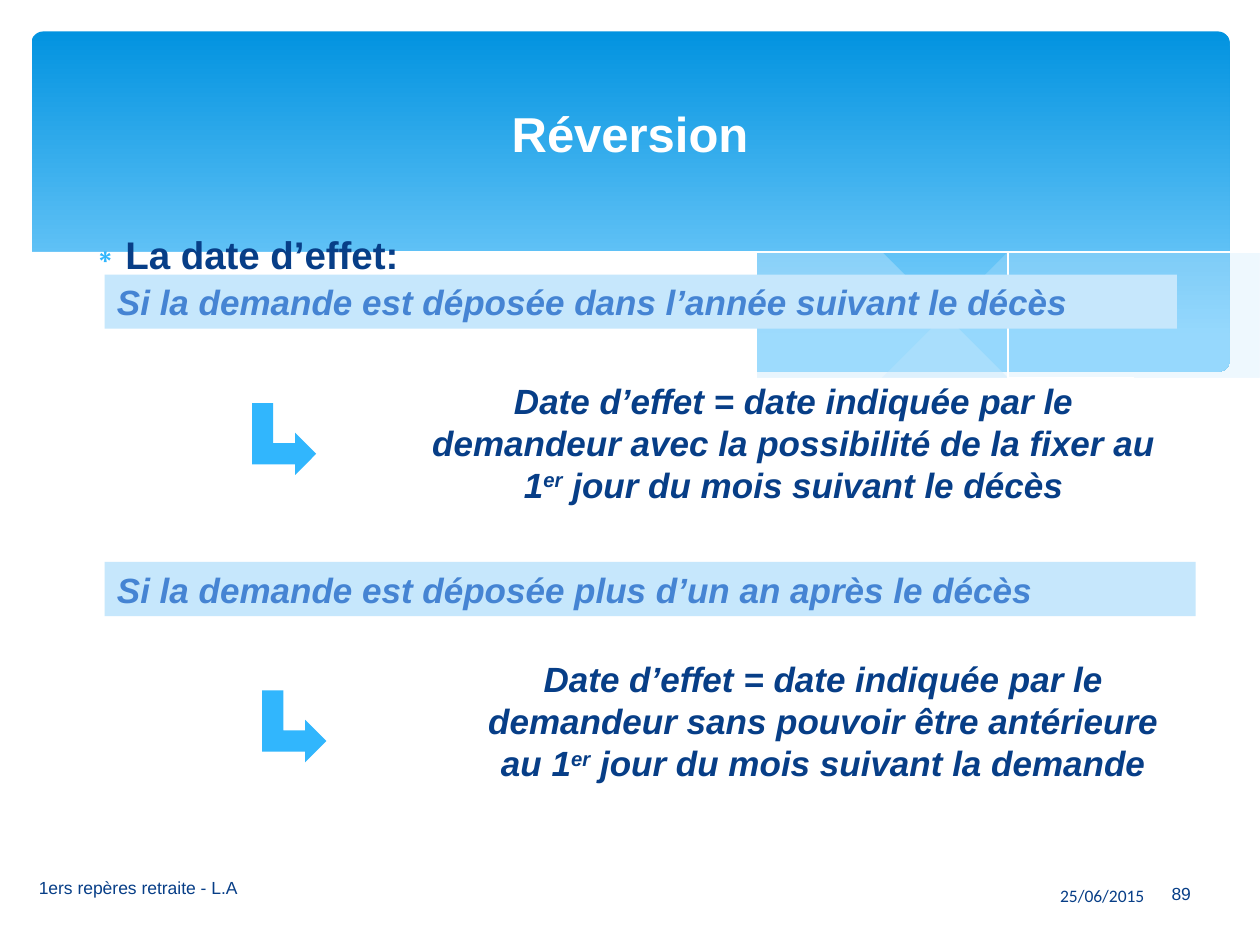
from lxml import etree
from pptx import Presentation
from pptx.dml.color import RGBColor
from pptx.enum.shapes import MSO_SHAPE
from pptx.enum.text import MSO_ANCHOR, PP_ALIGN
from pptx.oxml.ns import qn
from pptx.util import Inches, Pt

LEFT, CENTER, RIGHT = PP_ALIGN.LEFT, PP_ALIGN.CENTER, PP_ALIGN.RIGHT
TOP, MIDDLE = MSO_ANCHOR.TOP, MSO_ANCHOR.MIDDLE
ROUNDED, RECT, BENT_ARROW = (MSO_SHAPE.ROUNDED_RECTANGLE, MSO_SHAPE.RECTANGLE,
                             MSO_SHAPE.BENT_UP_ARROW)
WHITE, PALE, SKY, BLUE, NAVY = "FFFFFF", "C6E7FC", "31B6FD", "4584D3", "073E87"

TITLE = "Réversion"
HEADING = "La date d’effet:"
CASES = [
    {"condition": "Si la demande est déposée dans l’année suivant le décès",
     "band": (0.83, 2.18, 8.51, 0.43), "arrow": (1.97, 3.23, 0.57, 0.51),
     "rule": ["Date d’effet = date indiquée par le demandeur avec la possibilité "
              "de la fixer au 1", "er", " jour du mois suivant le décès"],
     "text": (3.27, 2.96, 6.06, 1.1)},
    {"condition": "Si la demande est déposée plus d’un an après le décès",
     "band": (0.83, 4.46, 8.66, 0.43), "arrow": (2.05, 5.51, 0.57, 0.51),
     "rule": ["Date d’effet = date indiquée par le demandeur sans pouvoir être "
              "antérieure au 1", "er", " jour du mois suivant la demande"],
     "text": (3.66, 5.17, 5.75, 1.1)},
]
FOOTERS = [
    ("1ers repères retraite - L.A", (0.21, 6.84, 4.14, 0.4), LEFT, "Arial"),
    ("25/06/2015", (5.65, 6.98, 3.53, 0.26), RIGHT, "Calibri"),
    ("89", (9.1, 6.9, 0.55, 0.39), CENTER, "Arial"),
]

RIGHT_WAVE = [
    [(9.76, 2), (9.35, 2.07), (8.91, 2.16), (8.32, 2.3), (7.53, 2.48), (6.61, 2.65)],
    [(6.61, 2.65), (7.05, 2.71), (7.57, 2.76), (8.14, 2.78), (8.63, 2.75),
     (9.05, 2.69), (9.42, 2.59), (9.76, 2.47)],
]
MIDDLE_WAVE = [
    [(8.93, 2.73), (8.37, 2.65), (7.75, 2.54), (7.06, 2.4), (6.29, 2.22), (5.69, 2.08),
     (5.14, 1.98), (4.65, 1.91), (4.2, 1.87), (3.61, 1.85), (3.28, 1.87), (2.86, 1.91)],
    [(2.86, 1.91), (3.42, 1.99), (4.04, 2.11), (4.91, 2.32), (5.66, 2.48), (6.34, 2.61),
     (6.95, 2.7), (7.48, 2.76), (8.07, 2.78), (8.48, 2.77), (8.93, 2.73)],
]
FALLING_LINE = [[(3.09, 1.95), (3.53, 1.89), (4.16, 1.87), (4.89, 1.9), (5.82, 2),
                 (6.65, 2.13), (7.6, 2.33), (8.31, 2.51), (9.07, 2.72)]]
RISING_LINE = [[(6.13, 2.57), (6.95, 2.35), (7.76, 2.16), (8.36, 2.04), (8.95, 1.94),
                (9.38, 1.88), (9.75, 1.85)]]
WHITE_WAVE = [
    [(9.77, 2.46), (9.4, 2.59), (8.99, 2.69), (8.5, 2.75), (8.09, 2.77), (7.61, 2.75),
     (7.08, 2.7), (6.48, 2.62), (5.79, 2.5), (5.03, 2.33), (4.47, 2.2), (3.91, 2.07),
     (3.4, 1.97), (2.92, 1.9), (2.5, 1.86), (1.93, 1.84), (1.46, 1.85), (1.06, 1.89),
     (0.76, 1.95), (0.46, 2.03), (0.23, 2.13)],
    [(0.23, 3.29), (9.77, 3.29)],
]
WAVES = [(RIGHT_WAVE, PALE, 29), (MIDDLE_WAVE, PALE, 40), (FALLING_LINE, None, 100),
         (RISING_LINE, None, 100), (WHITE_WAVE, WHITE, 100)]
STEPS = 4


def rgb(value):
    return RGBColor.from_string(value)


def smooth(points):
    padded = [points[0], *points, points[-1]]
    curve = [points[0]]
    for a, b, c, d in zip(padded, padded[1:], padded[2:], padded[3:]):
        for step in range(1, STEPS + 1):
            t = step / STEPS
            curve.append(tuple(
                (2 * q + (r - p) * t + (2 * p - 5 * q + 4 * r - s) * t ** 2
                 + (3 * q - p - 3 * r + s) * t ** 3) / 2
                for p, q, r, s in zip(a, b, c, d)))
    return curve


def add_wave(shapes, sections, color, opacity):
    points = [point for section in sections for point in smooth(section)]
    builder = shapes.build_freeform(*points[0], scale=Inches(1))
    builder.add_line_segments(points[1:], close=color is not None)
    sp = builder.convert_to_shape()
    sp.shadow.inherit = False
    if color is None:
        sp.fill.background()
        sp.line.color.rgb = rgb(WHITE)
        sp.line.width = Pt(0)
        return
    paint(sp, color)
    if opacity < 100:
        srgb = sp.element.spPr.find(qn("a:solidFill")).find(qn("a:srgbClr"))
        etree.SubElement(srgb, qn("a:alpha")).set("val", str(opacity * 1000))


def paint(sp, color):
    sp.shadow.inherit = False
    sp.fill.solid()
    sp.fill.fore_color.rgb = rgb(color)
    sp.line.fill.background()


def place(sp, box):
    sp.left, sp.top, sp.width, sp.height = map(Inches, box)


def write(sp, runs, size, color, align=LEFT, anchor=TOP, font="Arial",
          bold=False, italic=False):
    tf = sp.text_frame
    tf.word_wrap = True
    tf.vertical_anchor = anchor
    p = tf.paragraphs[0]
    p.alignment = align
    for index, text in enumerate(runs):
        r = p.add_run()
        r.text = text
        r.font.name, r.font.size = font, Pt(size)
        r.font.bold, r.font.italic = bold, italic
        r.font.color.rgb = rgb(color)
        if index == 1:
            r.font._element.set("baseline", "30000")
    return p


def add_header(shapes):
    sp = shapes.add_shape(ROUNDED, *map(Inches, (0.25, 0.25, 9.51, 2.7)))
    sp.adjustments[0] = 0.034
    sp.shadow.inherit = False
    sp.line.fill.background()
    sp.fill.gradient()
    sp.fill.gradient_angle = 270
    for stop, position, color in zip(sp.fill.gradient_stops, (0, 0.9), ("0293E0", "83D3FE")):
        stop.position = position
        stop.color.rgb = rgb(color)
    for wave in WAVES:
        add_wave(shapes, *wave)


def add_placeholders(slide):
    title, body = slide.placeholders
    for sp, box in ((body, (0.59, 1.78, 8.82, 5.12)), (title, (0.5, 0.37, 9, 1.37))):
        place(sp, box)
        slide.shapes.element.append(sp.element)
    write(title, [TITLE], 28, WHITE, CENTER, MIDDLE, bold=True)
    p = write(body, [HEADING], 22, NAVY, bold=True)
    p.space_before = Pt(4.4)
    pPr = p._p.get_or_add_pPr()
    pPr.set("marL", str(Inches(0.3)))
    pPr.set("indent", str(Inches(-0.3)))
    color = etree.SubElement(pPr, qn("a:buClr"))
    etree.SubElement(color, qn("a:srgbClr")).set("val", SKY)
    etree.SubElement(pPr, qn("a:buChar")).set("char", "∗")


def add_case(shapes, case):
    band = shapes.add_shape(RECT, *map(Inches, case["band"]))
    paint(band, PALE)
    write(band, [case["condition"]], 20, BLUE, bold=True, italic=True)
    arrow = shapes.add_shape(BENT_ARROW, *map(Inches, case["arrow"]))
    paint(arrow, SKY)
    arrow.rotation = 90
    for index in range(3):
        arrow.adjustments[index] = 0.33
    text = shapes.add_textbox(*map(Inches, case["text"]))
    write(text, case["rule"], 20, NAVY, CENTER, bold=True, italic=True)


def main():
    prs = Presentation()
    prs.slide_width, prs.slide_height = Inches(10), Inches(7.5)
    slide = prs.slides.add_slide(prs.slide_layouts[1])
    add_header(slide.shapes)
    add_placeholders(slide)
    for case in CASES:
        add_case(slide.shapes, case)
    for text, box, align, font in FOOTERS:
        sp = slide.shapes.add_textbox(*map(Inches, box))
        write(sp, [text], 10, NAVY, align, MIDDLE, font)
    prs.save("out.pptx")


if __name__ == "__main__":
    main()
